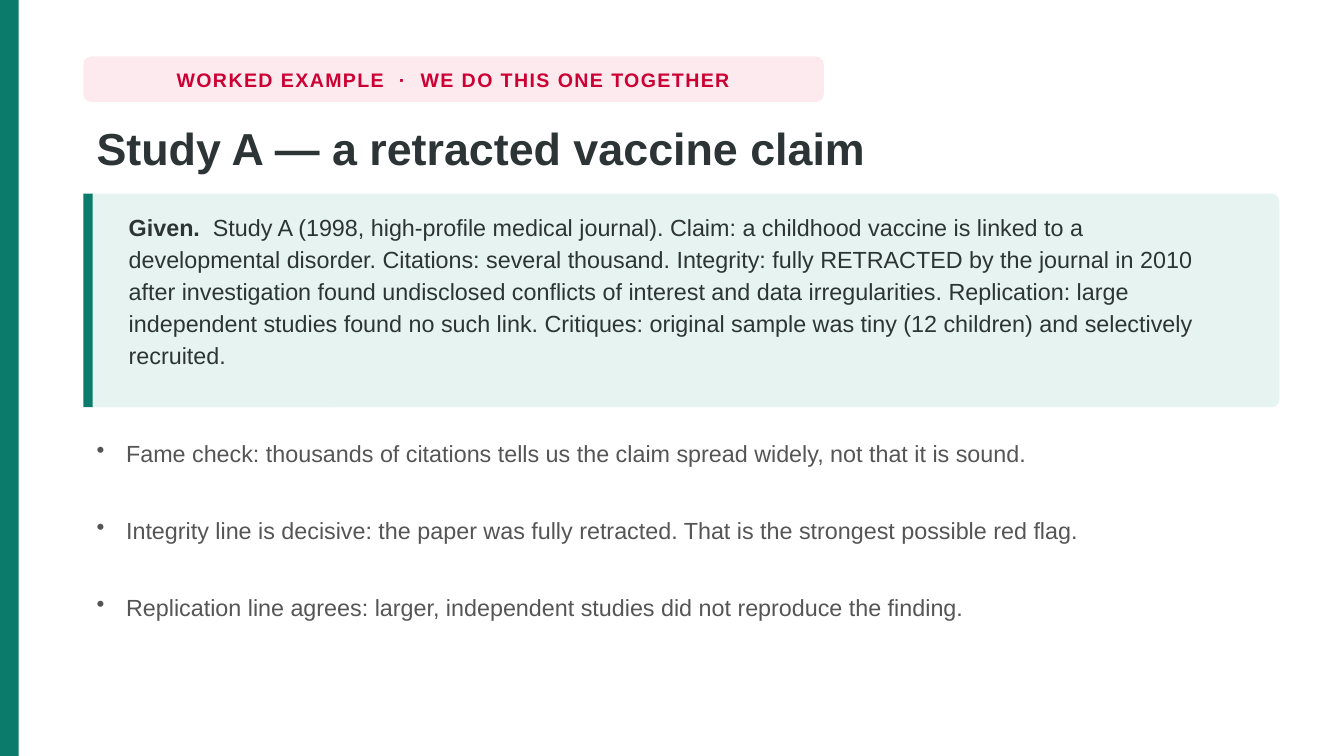
import pptx
import pptx.dml.color
import pptx.enum.shapes
import pptx.enum.text
import pptx.oxml.ns
import pptx.util
from lxml import etree

Inches = pptx.util.Inches
SHAPE = pptx.enum.shapes.MSO_SHAPE
ALIGN = pptx.enum.text.PP_ALIGN
ANCHOR = pptx.enum.text.MSO_ANCHOR


class Theme:
    FONT = "Arial"
    GREEN, MINT = "0B7B6B", "E6F3F0"
    RED, PINK = "CC0033", "FDEAEF"
    INK, GREY = "2D3436", "555555"
    TAG, TITLE, BODY = 10.5, 24, 12.5


class Deck:
    def __init__(self, prs, theme):
        self.theme = theme
        self.s = prs.slides.add_slide(prs.slide_layouts[6])

    def block(self, x, y, w, h, color, radius=None):
        """Filled rectangle; radius in inches rounds the corners."""
        kind = SHAPE.RECTANGLE if radius is None else SHAPE.ROUNDED_RECTANGLE
        sp = self.s.shapes.add_shape(kind, Inches(x), Inches(y), Inches(w), Inches(h))
        if radius is not None:
            sp.adjustments[0] = radius / min(w, h)
        sp.shadow.inherit = False
        sp.fill.solid()
        sp.fill.fore_color.rgb = pptx.dml.color.RGBColor.from_string(color)
        sp.line.fill.background()

    def text(self, x, y, w, h, runs, size, color, frame=None, para=None,
             bullet=False, tracking=None):
        """Text box with one paragraph; runs are (text, bold) pairs."""
        tf = self.s.shapes.add_textbox(
            Inches(x), Inches(y), Inches(w), Inches(h)).text_frame
        p = tf.paragraphs[0]
        if bullet:
            self.add_bullet(p)
        self.apply(tf, {"word_wrap": True, **(frame or {})})
        self.apply(p, para or {})
        for words, bold in runs:
            r = p.add_run()
            r.text = words
            self.apply(r.font, {"name": self.theme.FONT, "bold": bold,
                                "size": pptx.util.Pt(size)})
            r.font.color.rgb = pptx.dml.color.RGBColor.from_string(color)
            if tracking:
                r.font._element.set("spc", str(round(tracking * 100)))

    @staticmethod
    def add_bullet(p, indent=0.22):
        ppr = p._p.get_or_add_pPr()
        ppr.set("marL", str(Inches(indent)))
        ppr.set("indent", str(-Inches(indent)))
        etree.SubElement(ppr, pptx.oxml.ns.qn("a:buChar")).set("char", "•")

    @staticmethod
    def apply(target, values):
        for name, value in values.items():
            setattr(target, name, value)


def main():
    prs = pptx.Presentation()
    prs.slide_width, prs.slide_height = Inches(10), Inches(5.625)
    t = Theme()
    deck = Deck(prs, t)
    left, width = 0.62, 8.9

    # Edge stripe
    deck.block(0, 0, 0.14, 5.625, t.GREEN)

    # Tag
    tag = (left, 0.42, 5.51, 0.34)
    deck.block(*tag, t.PINK, radius=0.06)
    deck.text(*tag, [("WORKED EXAMPLE  ·  WE DO THIS ONE TOGETHER", True)],
              t.TAG, t.RED, tracking=0.8, para={"alignment": ALIGN.CENTER},
              frame={"word_wrap": False, "vertical_anchor": ANCHOR.MIDDLE})

    # Title
    deck.text(left, 0.84, width, 0.56,
              [("Study A — a retracted vaccine claim", True)],
              t.TITLE, t.INK, para={"line_spacing": 1.02})

    # Given panel
    top, height = 1.44, 1.59
    deck.block(left, top, width, height, t.MINT, radius=0.06)
    deck.block(left, top, 0.07, height, t.GREEN)
    given = (
        "Study A (1998, high-profile medical journal). Claim: a childhood vaccine "
        "is linked to a developmental disorder. Citations: several thousand. "
        "Integrity: fully RETRACTED by the journal in 2010 after investigation "
        "found undisclosed conflicts of interest and data irregularities. "
        "Replication: large independent studies found no such link. Critiques: "
        "original sample was tiny (12 children) and selectively recruited.")
    deck.text(left + 0.24, top + 0.07, 8.4, height - 0.14,
              [("Given.  ", True), (given, False)],
              t.BODY, t.INK, para={"line_spacing": 1.14})

    # Checks
    checks = [
        "Fame check: thousands of citations tells us the claim spread widely, "
        "not that it is sound.",
        "Integrity line is decisive: the paper was fully retracted. "
        "That is the strongest possible red flag.",
        "Replication line agrees: larger, independent studies did not "
        "reproduce the finding.",
    ]
    for i, check in enumerate(checks):
        deck.text(left, 3.19 + i * 0.575, width, 0.49, [(check, False)],
                  t.BODY, t.GREY, bullet=True, para={"line_spacing": 1.12})

    prs.save("out.pptx")


if __name__ == "__main__":
    main()
